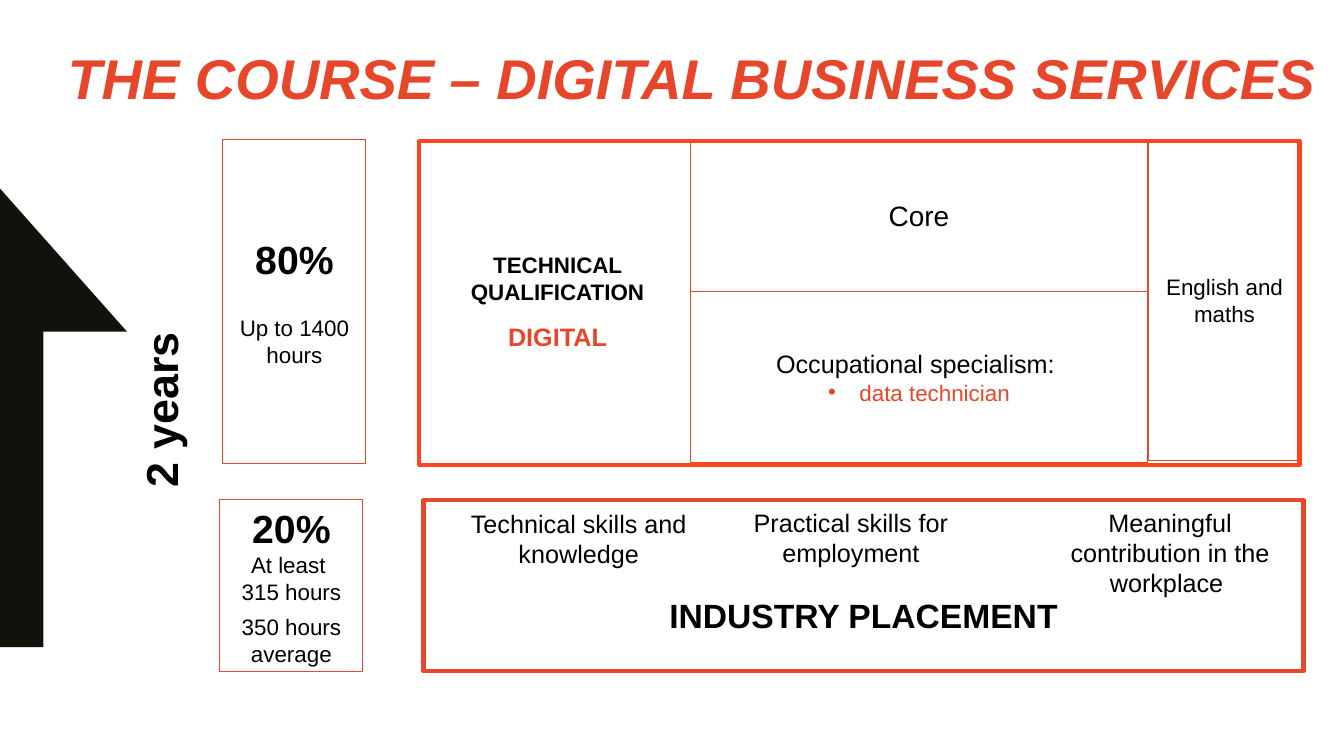
import pptx
import pptx.util
import pptx.dml.color
import pptx.enum.shapes
import pptx.enum.text
import pptx.oxml.ns
import lxml.etree

Inches = pptx.util.Inches
Pt = pptx.util.Pt
RGBColor = pptx.dml.color.RGBColor
ANCHOR = pptx.enum.text.MSO_ANCHOR
ALIGN = pptx.enum.text.PP_ALIGN
RECTANGLE = pptx.enum.shapes.MSO_SHAPE.RECTANGLE

BLACK = RGBColor(0x00, 0x00, 0x00)
WHITE = RGBColor(0xFF, 0xFF, 0xFF)
ARROW_BLACK = RGBColor(0x12, 0x11, 0x0C)
ORANGE = RGBColor(0xE8, 0x46, 0x2B)
OUTLINE = RGBColor(0xE8, 0x47, 0x2B)
FRAME = RGBColor(0xFC, 0x44, 0x21)


def add_box(place, line=None, width=0.75, fill=None):
    """Add a plain rectangle."""
    box = slide.shapes.add_shape(RECTANGLE, *[Inches(value) for value in place])
    box.shadow.inherit = False
    if fill is None:
        box.fill.background()
    else:
        box.fill.solid()
        box.fill.fore_color.rgb = fill
    if line is None:
        box.line.fill.background()
    else:
        box.line.color.rgb = line
        box.line.width = Pt(width)
    return box


def write(shape, lines, anchor=ANCHOR.MIDDLE, align=ALIGN.CENTER):
    """Fill a shape with (text, size, bold, colour, space after) lines."""
    frame = shape.text_frame
    frame.word_wrap = True
    frame.vertical_anchor = anchor
    frame.text = "\n".join(line[0] for line in lines)
    for para, (text, size, bold, color, after) in zip(frame.paragraphs, lines):
        para.alignment = align
        para.space_before = Pt(0)
        para.space_after = Pt(after)
        for run in para.runs:
            run.font.name = "Arial"
            run.font.size = Pt(size)
            run.font.bold = bold
            run.font.color.rgb = color


deck = pptx.Presentation()
deck.slide_width = Inches(13.33)
deck.slide_height = Inches(7.5)
slide = deck.slides.add_slide(deck.slide_layouts[5])

# Title
title = slide.shapes.title
title.left, title.top = Inches(0.57), Inches(0.38)
title.width, title.height = Inches(12.69), Inches(1.42)
write(title, [("THE COURSE – DIGITAL BUSINESS SERVICES", 40, True, ORANGE, 0)],
      ANCHOR.TOP, ALIGN.LEFT)
title.text_frame.paragraphs[0].runs[0].font.italic = True

# Half arrow at the left edge
outline = [(0, 1.87), (1.26, 3.29), (0.43, 3.29), (0.43, 6.42), (0, 6.42)]
points = [(Inches(x), Inches(y)) for x, y in outline]
builder = slide.shapes.build_freeform(*points[0])
builder.add_line_segments(points[1:], close=True)
arrow = builder.convert_to_shape()
arrow.shadow.inherit = False
arrow.fill.solid()
arrow.fill.fore_color.rgb = ARROW_BLACK
arrow.line.fill.background()

# Duration beside the arrow
years = slide.shapes.add_textbox(Inches(-0.98), Inches(3.83), Inches(5.14), Inches(0.47))
years.rotation = 270
write(years, [("2 years", 32, True, BLACK, 0)])

# Outlined boxes: shares of time and parts of the qualification
outlined_boxes = [
    ((2.21, 1.38, 1.42, 3.22), [("80%", 28, True, BLACK, 23),
                                ("Up to 1400 hours", 16, False, BLACK, 0)]),
    ((2.18, 4.96, 1.42, 1.7), [("20%", 28, True, BLACK, 0),
                               ("At least ", 16, False, BLACK, 0),
                               ("315 hours", 16, False, BLACK, 6),
                               ("350 hours average", 16, False, BLACK, 0)]),
    ((6.85, 1.39, 4.53, 1.5), [("Core", 20, False, BLACK, 0)]),
    ((11.39, 1.38, 1.51, 3.19), [("English and maths", 16, False, BLACK, 0)]),
]
for place, lines in outlined_boxes:
    write(add_box(place, OUTLINE), lines)

# Specialism with its bullet
specialism = add_box((6.85, 2.89, 4.53, 1.7), OUTLINE)
specialism.text_frame.text = "Occupational specialism: \ndata technician"
write(specialism, [("Occupational specialism: ", 18, False, BLACK, 0),
                   ("data technician", 16, False, ORANGE, 0)])
properties = specialism.text_frame.paragraphs[1]._p.get_or_add_pPr()
properties.set("marL", str(Inches(0.31)))
properties.set("indent", str(Inches(-0.31)))
bullet_font = lxml.etree.SubElement(properties, pptx.oxml.ns.qn("a:buFont"))
bullet_font.set("typeface", "Arial")
bullet = lxml.etree.SubElement(properties, pptx.oxml.ns.qn("a:buChar"))
bullet.set("char", "•")

# Qualification name and the frame around all its parts
qualification = slide.shapes.add_textbox(Inches(4.2), Inches(1.38), Inches(2.66), Inches(3.22))
write(qualification, [("TECHNICAL QUALIFICATION", 16, True, BLACK, 12),
                      ("DIGITAL", 18, True, ORANGE, 0)])
add_box((4.16, 1.4, 8.73, 3.21), FRAME, 3)

# Industry placement
placement = add_box((4.32, 5.93, 8.58, 0.35), fill=WHITE)
write(placement, [("INDUSTRY PLACEMENT ", 24, True, BLACK, 0)])
add_box((4.2, 4.96, 8.73, 1.7), OUTLINE, 3)
benefits = [
    ((4.38, 4.99, 2.72, 0.83), "Technical skills and knowledge"),
    ((7.06, 4.98, 2.76, 0.81), "Practical skills for employment"),
    ((10.32, 4.98, 2.57, 1.17), "Meaningful contribution in the workplace "),
]
for place, text in benefits:
    benefit = slide.shapes.add_textbox(*[Inches(value) for value in place])
    write(benefit, [(text, 18, False, BLACK, 0)], ANCHOR.TOP)

deck.save("out.pptx")
